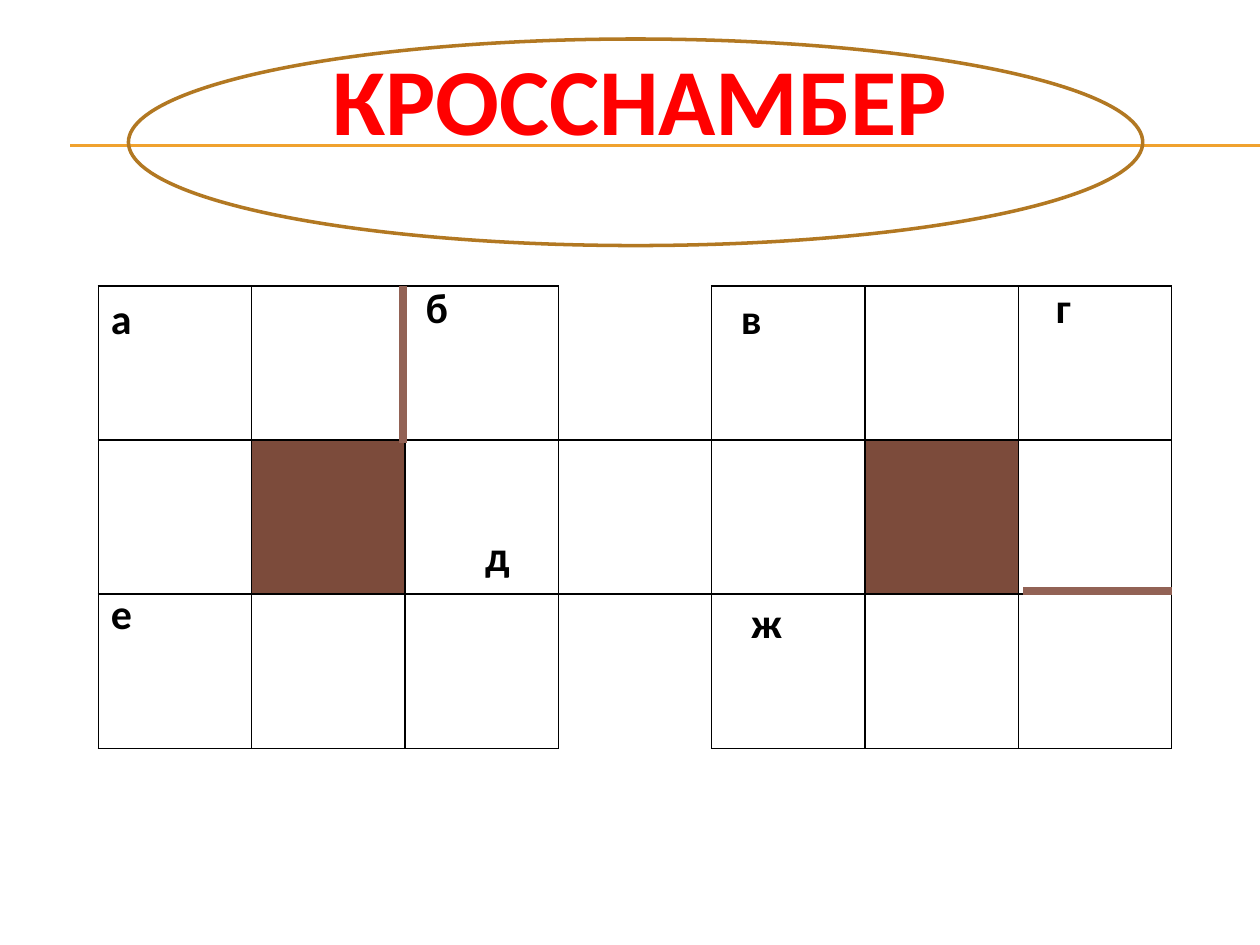
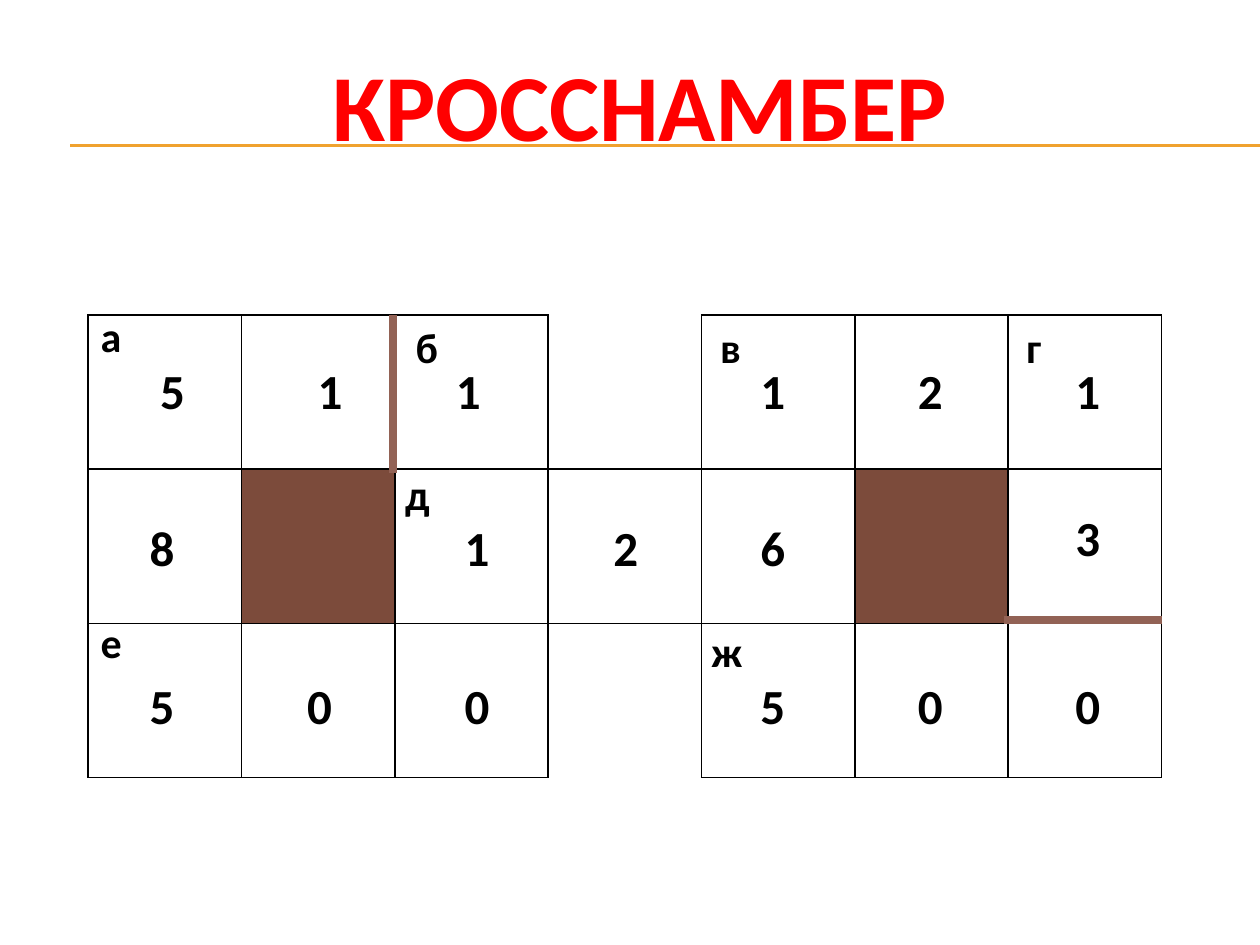
from lxml import etree
from pptx import Presentation
from pptx.dml.color import RGBColor
from pptx.enum.shapes import MSO_CONNECTOR, MSO_SHAPE
from pptx.enum.text import MSO_ANCHOR, PP_ALIGN
from pptx.oxml import parse_xml
from pptx.oxml.ns import nsdecls, qn
from pptx.util import Pt

STRAIGHT = MSO_CONNECTOR.STRAIGHT
OVAL = MSO_SHAPE.OVAL
MIDDLE = MSO_ANCHOR.MIDDLE
LEFT, CENTER = PP_ALIGN.LEFT, PP_ALIGN.CENTER

FONT = "Calibri"
BLACK, RED, GOLD = "000000", "FF0000", "F0A22E"
OVAL_BROWN, BLOCK_BROWN, BAR_BROWN = "B27822", "7C4B3B", "926255"

COLUMNS, ROWS = 7, 3
CELL_WIDTH, CELL_HEIGHT = 87.63, 88.08
GRID_WIDTH = COLUMNS * CELL_WIDTH
BLOCKED_CELLS = {(1, 1), (1, 5)}
OPEN_EDGES = {(0, 3): "lnT", (2, 3): "lnB"}
BAR_OFFSET, BAR_LENGTH = 174.24, 90

CLUE_WIDTHS = {"а": 27, "б": 27.5, "в": 27, "г": 23, "д": 29, "е": 27, "ж": 32.4}
PUZZLE_CLUES = {"а": (0, 0), "б": (180, -6), "в": (360, 0), "г": (540, -6),
                "д": (214, 135.5), "е": (0, 168.5), "ж": (366, 174)}
ANSWER_CLUES = {"а": (0, -6), "б": (180, 0), "в": (354, 0), "г": (529, 0),
                "д": (174, 84), "е": (0, 168.5), "ж": (349, 174)}

ANSWERS = ["511 121", "8 126 3", "500 500"]
ANSWER_LEFTS = [28, 118, 208, 293, 377, 467, 557]
ANSWER_TOP, ANSWER_PITCH = 22.3, 90
ANSWER_SHIFTS = {(0, 0): (6, 0), (0, 1): (6, 0), (0, 2): (-5, 0), (1, 6): (0, -6)}


def rgb(value):
    """Turn a hex string into a colour."""
    return RGBColor.from_string(value)


def write(frame, text, size=24, color=BLACK, align=LEFT):
    """Put one bold formatted paragraph into a text frame."""
    frame.word_wrap = True
    paragraph = frame.paragraphs[0]
    paragraph.alignment = align
    run = paragraph.add_run()
    run.text = text
    run.font.name, run.font.size, run.font.bold = FONT, Pt(size), True
    run.font.color.rgb = rgb(color)


def add_label(slide, text, left, top, width, height, **style):
    """Add a text box holding a single character."""
    label = slide.shapes.add_textbox(Pt(left), Pt(top), Pt(width), Pt(height))
    write(label.text_frame, text, **style)


def add_line(slide, start, end, color, weight):
    """Draw a straight line without a shadow."""
    line = slide.shapes.add_connector(STRAIGHT, *map(Pt, start + end))
    line.line.color.rgb = rgb(color)
    line.line.width = Pt(weight)
    etree.SubElement(line.element.spPr, qn("a:effectLst"))


def add_heading(slide, height):
    """Place the heading in front of the two gold rules."""
    for rule_top in (82.8, 83.5):
        add_line(slide, (40.3, rule_top), (720, rule_top), GOLD, 0.75)
    heading = slide.shapes.title
    heading.left, heading.top, heading.width, heading.height = map(
        Pt, (23.75, 16.5, 684, height))
    heading.text_frame.vertical_anchor = MIDDLE
    write(heading.text_frame, "КРОССНАМБЕР", size=54, color=RED, align=CENTER)
    heading.element.getparent().append(heading.element)


def add_oval(slide, left, top, width, height):
    """Ring the heading with an unfilled oval."""
    oval = slide.shapes.add_shape(OVAL, *map(Pt, (left, top, width, height)))
    oval.shadow.inherit = False
    oval.fill.background()
    oval.line.color.rgb = rgb(OVAL_BROWN)
    oval.line.width = Pt(2)


def set_borders(cell, open_edge):
    """Give a cell black borders on every edge but the open one."""
    properties = cell._tc.get_or_add_tcPr()
    for position, edge in enumerate(("lnL", "lnR", "lnT", "lnB")):
        paint = ("<a:noFill/>" if edge == open_edge else
                 f'<a:solidFill><a:srgbClr val="{BLACK}"/></a:solidFill>')
        properties.insert(position, parse_xml(
            f'<a:{edge} {nsdecls("a")} w="{Pt(1)}">{paint}</a:{edge}>'))


def add_grid(slide, left, top, bar_start):
    """Draw the crossword grid and its two separating bars."""
    grid = slide.shapes.add_table(
        ROWS, COLUMNS, Pt(left), Pt(top), Pt(GRID_WIDTH), Pt(ROWS * CELL_HEIGHT)).table
    grid.first_row = grid.horz_banding = False
    for column in grid.columns:
        column.width = Pt(CELL_WIDTH)
    for row_index, row in enumerate(grid.rows):
        row.height = Pt(CELL_HEIGHT)
        for column_index, cell in enumerate(row.cells):
            place = (row_index, column_index)
            if place in BLOCKED_CELLS:
                cell.fill.solid()
                cell.fill.fore_color.rgb = rgb(BLOCK_BROWN)
            else:
                cell.fill.background()
            set_borders(cell, OPEN_EDGES.get(place))
    upright, level = left + BAR_OFFSET, top + BAR_OFFSET
    add_line(slide, (upright, top), (upright, top + BAR_LENGTH), BAR_BROWN, 4.5)
    add_line(slide, (left + bar_start, level), (left + GRID_WIDTH, level), BAR_BROWN, 4.5)


def add_clues(slide, left, top, clues):
    """Place the clue letters relative to the grid corner."""
    for letter, (across, down) in clues.items():
        add_label(slide, letter, left + across, top + down, CLUE_WIDTHS[letter], 36.5)


def add_answers(slide, left, top):
    """Place the answer digits relative to the grid corner."""
    for row, digits in enumerate(ANSWERS):
        for column, digit in enumerate(digits):
            if digit == " ":
                continue
            across, down = ANSWER_SHIFTS.get((row, column), (0, 0))
            add_label(slide, digit, left + ANSWER_LEFTS[column] + across,
                      top + ANSWER_TOP + row * ANSWER_PITCH + down, 28.8, 41, size=28)


def add_puzzle_slide(deck, left, top):
    """Build the slide with the empty puzzle."""
    slide = deck.slides.add_slide(deck.slide_layouts[5])
    add_grid(slide, left, top, 528.5)
    add_clues(slide, left, top, PUZZLE_CLUES)
    add_heading(slide, 78.5)
    add_oval(slide, 73.4, 22.3, 579.6, 118)


def add_answer_slide(deck, left, top):
    """Build the slide with the solved puzzle."""
    slide = deck.slides.add_slide(deck.slide_layouts[5])
    add_heading(slide, 85.7)
    add_grid(slide, left, top, 523.4)
    add_answers(slide, left, top)
    add_clues(slide, left, top, ANSWER_CLUES)


def main():
    """Build and save the presentation."""
    deck = Presentation()
    deck.slide_width, deck.slide_height = Pt(720), Pt(540)
    add_puzzle_slide(deck, 56.2, 163.4)
    add_answer_slide(deck, 50.4, 180)
    deck.save("out.pptx")


if __name__ == "__main__":
    main()
